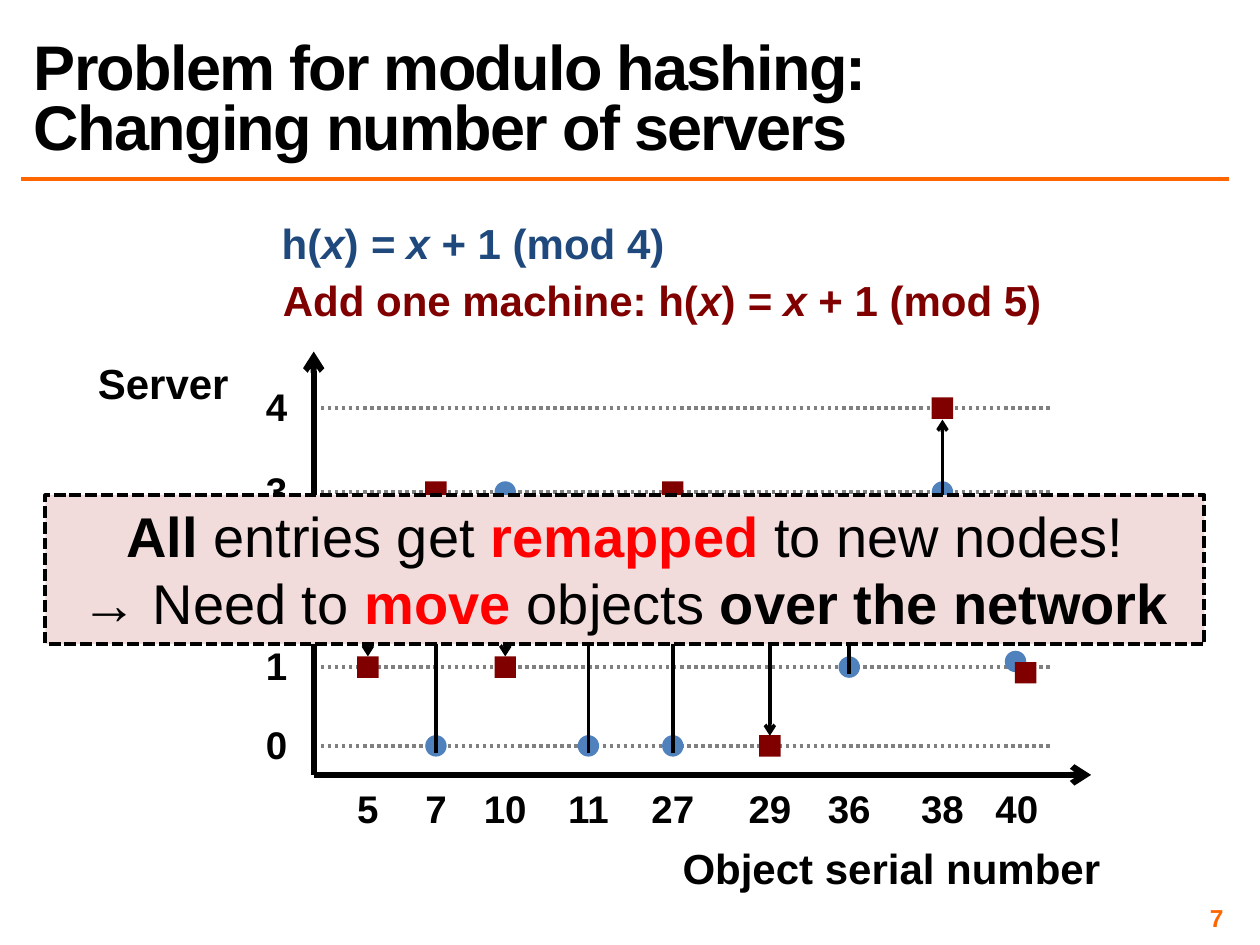
from pptx import Presentation
from pptx.util import Inches, Pt
from pptx.dml.color import RGBColor
from pptx.enum.dml import MSO_LINE
from pptx.enum.shapes import MSO_CONNECTOR, MSO_SHAPE
from pptx.enum.text import MSO_ANCHOR, PP_ALIGN
from pptx.oxml.ns import qn
from lxml import etree

STRAIGHT = MSO_CONNECTOR.STRAIGHT
OVAL, RECT = MSO_SHAPE.OVAL, MSO_SHAPE.RECTANGLE
DOT, DASH = MSO_LINE.ROUND_DOT, MSO_LINE.SQUARE_DOT
LEFT, CENTER, RIGHT = PP_ALIGN.LEFT, PP_ALIGN.CENTER, PP_ALIGN.RIGHT
TOP, MIDDLE, BOTTOM = MSO_ANCHOR.TOP, MSO_ANCHOR.MIDDLE, MSO_ANCHOR.BOTTOM

BLACK = RGBColor(0x00, 0x00, 0x00)
GRAY = RGBColor(0x80, 0x80, 0x80)
ORANGE = RGBColor(0xFF, 0x66, 0x00)
NAVY = RGBColor(0x1F, 0x49, 0x7D)
BLUE = RGBColor(0x4F, 0x81, 0xBD)
MAROON = RGBColor(0x80, 0x00, 0x00)
RED = RGBColor(0xFF, 0x00, 0x00)
PINK = RGBColor(0xF2, 0xDC, 0xDB)

prs = Presentation()
prs.slide_width, prs.slide_height = Inches(10), Inches(7.5)
s = prs.slides.add_slide(prs.slide_layouts[6])
COL = prs.slide_width / 100
ROW = prs.slide_height / 75


def write(sp, paragraphs, size, align=CENTER, anchor=TOP, wrap=False):
    tf = sp.text_frame
    tf.word_wrap = wrap
    tf.vertical_anchor = anchor
    for i, runs in enumerate(paragraphs):
        p = tf.paragraphs[0] if i == 0 else tf.add_paragraph()
        p.alignment = align
        for text, color, bold, italic in runs:
            r = p.add_run()
            r.text = text
            r.font.name, r.font.size = "Arial", Pt(size)
            r.font.bold, r.font.italic = bold, italic
            r.font.color.rgb = color
    return tf


def line(x1, y1, x2, y2, color, width, dash=None, arrow=False):
    c = s.shapes.add_connector(STRAIGHT, int(x1 * COL), int(y1 * ROW), int(x2 * COL), int(y2 * ROW))
    c.line.color.rgb, c.line.width = color, Pt(width)
    if dash:
        c.line.dash_style = dash
    if arrow:
        etree.SubElement(c.line._get_or_add_ln(), qn("a:tailEnd"), type="arrow")
    etree.SubElement(c._element.spPr, qn("a:effectLst"))


servers = {4: 32.4, 3: 39.05, 1: 52.95, 0: 59.2}
objects = {5: 29.2, 7: 34.6, 10: 40.1, 11: 46.7, 27: 53.4, 29: 61.1, 36: 67.4, 38: 74.8, 40: 80.7}
axis_x, axis_y = 24.9, 61.5

line(1.7, 14.2, 97.5, 14.2, ORANGE, 2)
for y in servers.values():
    line(axis_x, y, 83.3, y, GRAY, 2, DOT)
line(axis_x, axis_y, 86.6, axis_y, BLACK, 3.5, arrow=True)
line(axis_x, axis_y, axis_x, 27.9, BLACK, 3.5, arrow=True)

sp = s.shapes.add_textbox(int(1.7 * COL), int(1.7 * ROW), int(95.8 * COL), int(11.7 * ROW))
tf = write(sp, [[("Problem for modulo hashing:\vChanging number of servers", BLACK, True, False)]],
           36, LEFT, BOTTOM, True)
tf.text = "Problem for modulo hashing:\vChanging number of servers"
p = tf.paragraphs[0]
p.alignment, p.line_spacing = LEFT, 0.8
for r in p.runs:
    r.font.name, r.font.size, r.font.bold = "Arial", Pt(36), True
    r.font.color.rgb = BLACK
    r._r.get_or_add_rPr().set("spc", "-100")

labels = [
    (6.7, 27.9, 12.5, 5, 24, [("Server", BLACK, True, False)]),
    (53, 66.4, 35.5, 5, 24, [("Object serial number", BLACK, True, False)]),
]
for y, w, lead, color, n in [(16.8, 32.7, "h(", NAVY, 4), (21.3, 62.7, "Add one machine: h(", MAROON, 5)]:
    labels.append((21.2, y, w, 5, 24, [
        (lead, color, True, False), ("x", color, True, True), (")", color, True, False),
        (" = x ", color, True, True), (f"+ 1 (mod {n})", color, True, False)]))
for name, y in servers.items():
    labels.append((20.1, y - 2.5, 3.7, 4.7, 22, [(str(name), BLACK, True, False)]))
for name, x in objects.items():
    w = 3.7 if name < 10 else 5.5
    labels.append((x - w / 2, 61.8, w, 4.7, 22, [(str(name), BLACK, True, False)]))
for x, y, w, h, size, runs in labels:
    sp = s.shapes.add_textbox(int(x * COL), int(y * ROW), int(w * COL), int(h * ROW))
    write(sp, [runs], size)

before = {7: 0, 10: 3, 11: 0, 27: 0, 36: 1, 38: 3}
after = {5: 1, 7: 3, 10: 1, 27: 3, 29: 0, 38: 4}
marks = [(OVAL, BLUE, objects[n], servers[k]) for n, k in before.items()]
marks += [(OVAL, BLUE, 80.6, 52.5)]
marks += [(RECT, MAROON, objects[n], servers[k]) for n, k in after.items()]
marks += [(RECT, MAROON, 81.4, 53.4)]
size = 1.7
for kind, color, x, y in marks:
    sp = s.shapes.add_shape(kind, int((x - size / 2) * COL), int((y - size / 2) * ROW),
                            int(size * COL), int(size * ROW))
    sp.shadow.inherit = False
    sp.fill.solid()
    sp.fill.fore_color.rgb = color
    sp.line.fill.background()

moves = {5: (48.3, 52.1), 7: (59.8, 39.9), 10: (41.3, 52.1), 11: (59.8, 46.8),
         27: (59.8, 39.9), 29: (48.3, 58.4), 36: (53.5, 46.8), 38: (39.7, 33.3)}
for name, (start, end) in moves.items():
    line(objects[name], start, objects[name], end, BLACK, 2, arrow=True)

sp = s.shapes.add_shape(RECT, int(3.6 * COL), int(39.3 * ROW), int(92 * COL), int(11.8 * ROW))
sp.shadow.inherit = False
sp.fill.solid()
sp.fill.fore_color.rgb = PINK
sp.line.color.rgb, sp.line.width, sp.line.dash_style = BLACK, Pt(2.25), DASH
write(sp, [
    [("All", BLACK, True, False), (" entries get ", BLACK, False, False),
     ("remapped ", RED, True, False), ("to new nodes!", BLACK, False, False)],
    [("→ Need to ", BLACK, False, False), ("move ", RED, True, False),
     ("objects ", BLACK, False, False), ("over the network", BLACK, True, False)],
], 32, wrap=True)

sp = s.shapes.add_textbox(int(74.2 * COL), int(71.7 * ROW), int(23.3 * COL), int(2.3 * ROW))
tf = write(sp, [[("7", ORANGE, True, False)]], 14, RIGHT, MIDDLE, True)
tf.margin_left = tf.margin_right = tf.margin_top = tf.margin_bottom = int(0.4 * COL)

prs.save("out.pptx")
